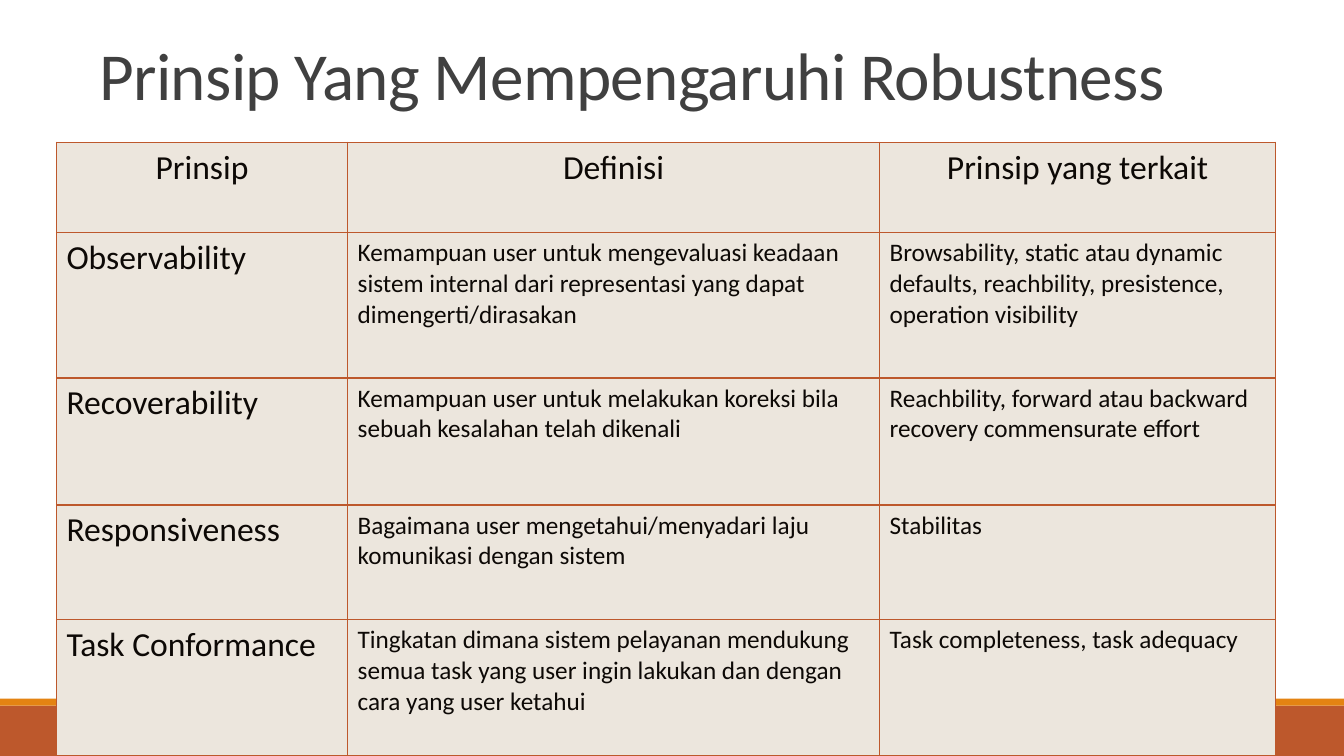
import pptx
import pptx.util
import pptx.dml.color
import pptx.enum.shapes
import pptx.enum.text
import pptx.oxml
import pptx.oxml.ns

Pt = pptx.util.Pt
RGB = pptx.dml.color.RGBColor
ALIGN = pptx.enum.text.PP_ALIGN
RUST = RGB(0xBD, 0x58, 0x2C)
ORANGE = RGB(0xE4, 0x83, 0x12)
SAND = RGB(0xEC, 0xE6, 0xDD)
GRAY = RGB(0x40, 0x40, 0x40)
INK = RGB(0x0D, 0x09, 0x06)


def write(frame, text, size, color=INK, align=ALIGN.LEFT, lead=1.0, track=0):
    frame.word_wrap = True
    para = frame.paragraphs[0]
    para.alignment = align
    para.line_spacing = lead
    run = para.add_run()
    run.text = text
    run.font.name = "Calibri"
    run.font.size = Pt(size)
    run.font.color.rgb = color
    if track:
        run.font._element.set("spc", str(track))


deck = pptx.Presentation()
deck.slide_width = Pt(960)
deck.slide_height = Pt(540)
slide = deck.slides.add_slide(deck.slide_layouts[6])

for top, height, color in [(504, 36, RUST), (499, 5, ORANGE)]:
    band = slide.shapes.add_shape(
        pptx.enum.shapes.MSO_SHAPE.RECTANGLE, 0, Pt(top), Pt(960), Pt(height))
    band.shadow.inherit = False
    band.fill.solid()
    band.fill.fore_color.rgb = color
    band.line.fill.background()

title = slide.shapes.add_textbox(Pt(64), Pt(8.6), Pt(832), Pt(76.4))
title.text_frame.vertical_anchor = pptx.enum.text.MSO_ANCHOR.BOTTOM
write(title.text_frame, "Prinsip Yang Mempengaruhi Robustness", 48,
      color=GRAY, lead=0.85, track=-50)

rows = [
    ("Prinsip", "Definisi", "Prinsip yang terkait"),
    ("Observability",
     "Kemampuan user untuk mengevaluasi keadaan sistem internal dari "
     "representasi yang dapat dimengerti/dirasakan",
     "Browsability, static atau dynamic defaults, reachbility, presistence, "
     "operation visibility"),
    ("Recoverability",
     "Kemampuan user untuk melakukan koreksi bila sebuah kesalahan telah dikenali",
     "Reachbility, forward atau backward recovery commensurate effort"),
    ("Responsiveness",
     "Bagaimana user mengetahui/menyadari laju komunikasi dengan sistem",
     "Stabilitas"),
    ("Task Conformance",
     "Tingkatan dimana sistem pelayanan mendukung semua task yang user ingin "
     "lakukan dan dengan cara yang user ketahui",
     "Task completeness, task adequacy"),
]
widths = [208, 380, 283]
heights = [64.8, 103.7, 90.7, 82.1, 97.2]

grid = slide.shapes.add_table(
    len(rows), len(widths), Pt(40.3), Pt(101.5), Pt(sum(widths)), Pt(sum(heights))).table
for col, width in zip(grid.columns, widths):
    col.width = Pt(width)
for row, height in zip(grid.rows, heights):
    row.height = Pt(height)

for r, row in enumerate(rows):
    for c, text in enumerate(row):
        cell = grid.cell(r, c)
        write(cell.text_frame, text, 24 if r == 0 or c == 0 else 18,
              align=ALIGN.CENTER if r == 0 else ALIGN.LEFT)
        props = cell._tc.get_or_add_tcPr()
        for side in ("lnL", "lnR", "lnT", "lnB"):
            props.append(pptx.oxml.parse_xml(
                f'<a:{side} {pptx.oxml.ns.nsdecls("a")} w="{Pt(1)}"><a:solidFill>'
                f'<a:srgbClr val="{RUST}"/></a:solidFill></a:{side}>'))
        cell.fill.solid()
        cell.fill.fore_color.rgb = SAND

deck.save("out.pptx")
